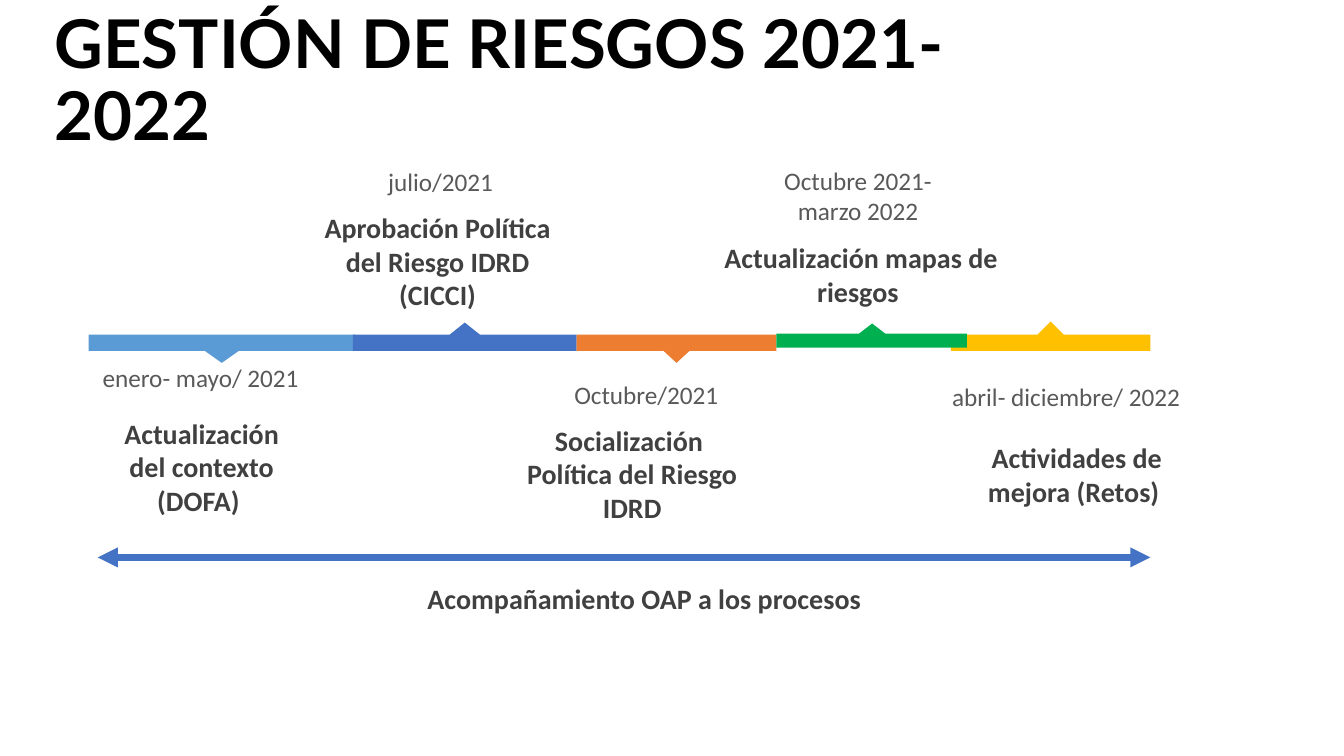
"""Build the risk management timeline slide for 2021-2022."""
from lxml import etree
from pptx import Presentation
from pptx.dml.color import RGBColor
from pptx.enum.shapes import MSO_CONNECTOR
from pptx.enum.text import MSO_ANCHOR, MSO_AUTO_SIZE, PP_ALIGN
from pptx.oxml.ns import qn
from pptx.util import Pt

PX = 9144
TITLE_ONLY = 5
CENTER, LEFT = PP_ALIGN.CENTER, PP_ALIGN.LEFT
MIDDLE, TOP = MSO_ANCHOR.MIDDLE, MSO_ANCHOR.TOP
NO_FIT = MSO_AUTO_SIZE.NONE
STRAIGHT = MSO_CONNECTOR.STRAIGHT

THEME = {
    "title": ("Lato", 48, True, "000000"),
    "date": ("Calibri", 18, False, "595959"),
    "label": ("Calibri", 20, True, "404040"),
    "light blue": "5B9BD5",
    "blue": "4472C4",
    "orange": "ED7D31",
    "amber": "FFC000",
    "green": "00B050",
    "arrow width": 4.75,
}

deck = Presentation()
deck.slide_width, deck.slide_height = 1333 * PX, 750 * PX
page = deck.slides.add_slide(deck.slide_layouts[TITLE_ONLY])


def write_text(box, lines, style, align, anchor):
    """Fill a box with one paragraph per line in a theme style."""
    frame = box.text_frame
    frame.word_wrap = True
    frame.auto_size = NO_FIT
    frame.vertical_anchor = anchor
    frame.text = "\n".join(lines)
    name, size, bold, color = THEME[style]
    for para in frame.paragraphs:
        para.alignment = align
        para.font.name, para.font.size, para.font.bold = name, Pt(size), bold
        para.font.color.rgb = RGBColor.from_string(color)


title = page.shapes.title
title.left, title.top, title.width, title.height = 44 * PX, 35 * PX, 1053 * PX, 94 * PX
write_text(title, ["GESTIÓN DE RIESGOS 2021-2022"], "title", LEFT, MIDDLE)
title.text_frame.paragraphs[0].line_spacing = 0.9

# left, right, flat edge, notched edge, tip x, tip y, half tip width
segments = [
    ("light blue", 88, 352, 332, 348, 220, 360, 17),
    ("blue", 350, 572, 348, 332, 461, 320, 15),
    ("orange", 572, 770, 332, 348, 671, 360, 13),
    ("amber", 943, 1141, 348, 332, 1042, 319, 13),
    ("green", 770, 959, 345, 331, 865, 321, 13),
]
for color, left, right, flat, notched, tip_x, tip_y, half in segments:
    outline = page.shapes.build_freeform(left, flat, scale=PX)
    outline.add_line_segments([
        (right, flat), (right, notched), (tip_x + half, notched),
        (tip_x, tip_y), (tip_x - half, notched), (left, notched),
    ], close=True)
    segment = outline.convert_to_shape()
    segment.shadow.inherit = False
    segment.fill.solid()
    segment.fill.fore_color.rgb = RGBColor.from_string(THEME[color])
    segment.line.fill.background()

texts = [
    ("date", 88, 354, 222, 71, ["enero- mayo/ 2021"]),
    ("label", 97, 408, 206, 111, ["Actualización del contexto", "(DOFA) "]),
    ("date", 326, 160, 222, 40, ["julio/2021"]),
    ("label", 310, 204, 248, 111, ["Aprobación Política del Riesgo IDRD (CICCI)"]),
    ("date", 530, 371, 222, 40, ["Octubre/2021"]),
    ("label", 506, 415, 242, 111, ["Socialización ", "Política del Riesgo IDRD"]),
    ("date", 740, 159, 222, 71, ["Octubre 2021- marzo 2022"]),
    ("label", 708, 234, 292, 77, ["Actualización mapas de riesgos "]),
    ("date", 931, 373, 253, 40, ["abril- diciembre/ 2022"]),
    ("label", 965, 432, 206, 77, ["Actividades de mejora (Retos) "]),
    ("label", 187, 572, 904, 44, ["Acompañamiento OAP a los procesos"]),
]
for style, left, top, width, height, lines in texts:
    box = page.shapes.add_textbox(left * PX, top * PX, width * PX, height * PX)
    write_text(box, lines, style, CENTER, TOP)

arrow = page.shapes.add_connector(STRAIGHT, 97 * PX, 553 * PX, 1141 * PX, 553 * PX)
arrow.line.color.rgb = RGBColor.from_string(THEME["blue"])
arrow.line.width = Pt(THEME["arrow width"])
properties = arrow.line.fill._xPr
for end in ("a:headEnd", "a:tailEnd"):
    etree.SubElement(properties, qn(end), type="triangle")
etree.SubElement(properties.getparent(), qn("a:effectLst"))

deck.save("out.pptx")
